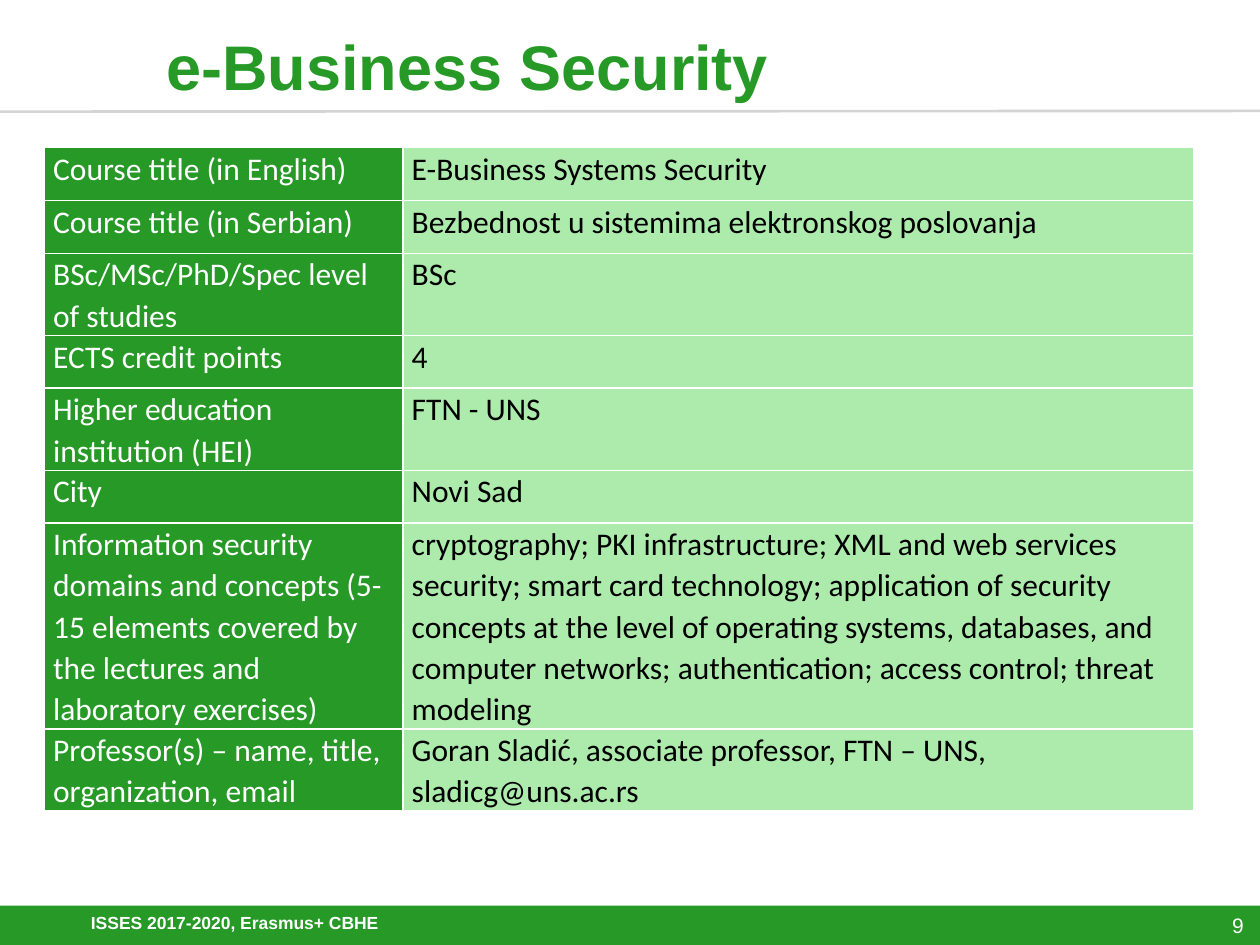
from lxml.etree import SubElement
from pptx import Presentation
from pptx.dml.color import RGBColor
from pptx.enum.shapes import MSO_CONNECTOR, MSO_SHAPE
from pptx.enum.text import MSO_ANCHOR, MSO_AUTO_SIZE, PP_ALIGN
from pptx.oxml.ns import qn
from pptx.util import Pt

GREEN = RGBColor(0x26, 0x99, 0x26)
LIGHT_GREEN = RGBColor(0xAD, 0xEB, 0xAD)
GRAY = RGBColor(0xD4, 0xD4, 0xD4)
WHITE = RGBColor(0xFF, 0xFF, 0xFF)
BLACK = RGBColor(0, 0, 0)

TITLE = "e-Business Security"
FOOTER = "ISSES 2017-2020, Erasmus+ CBHE"
PAGE = "9"
ONE_LINE, TWO_LINES, FIVE_LINES = 30.24, 46.9, 117.5
COLUMNS = [204.9, 452]
COURSE = [
    ("Course title (in English)", "E-Business Systems Security", ONE_LINE),
    ("Course title (in Serbian)", "Bezbednost u sistemima elektronskog poslovanja", ONE_LINE),
    ("BSc/MSc/PhD/Spec level of studies", "BSc", TWO_LINES),
    ("ECTS credit points", "4", ONE_LINE),
    ("Higher education institution (HEI)", "FTN - UNS", TWO_LINES),
    ("City", "Novi Sad", ONE_LINE),
    ("Information security domains and concepts (5-15 elements covered by "
     "the lectures and laboratory exercises)",
     "cryptography; PKI infrastructure; XML and web services security; smart card "
     "technology; application of security concepts at the level of operating systems, "
     "databases, and computer networks; authentication; access control; threat modeling",
     FIVE_LINES),
    ("Professor(s) – name, title, organization, email",
     "Goran Sladić, associate professor, FTN – UNS, sladicg@uns.ac.rs", TWO_LINES),
]


def write(tf, text, size, color, font="Arial", bold=False, align=PP_ALIGN.LEFT, spacing=1.0):
    tf.word_wrap = True
    p = tf.paragraphs[0]
    p.text = text
    p.alignment = align
    p.line_spacing = spacing
    p.font.name, p.font.size, p.font.bold = font, Pt(size), bold
    p.font.color.rgb = color


def add_footer_text(s, left, width, text, size, **style):
    tf = s.shapes.add_textbox(Pt(left), Pt(517), Pt(width), Pt(23)).text_frame
    tf.vertical_anchor = MSO_ANCHOR.MIDDLE
    write(tf, text, size, WHITE, align=PP_ALIGN.RIGHT, **style)


def format_cell(cell, text, color, fill):
    cell.margin_left = cell.margin_right = Pt(5)
    cell.margin_top = cell.margin_bottom = 0
    write(cell.text_frame, text, 18, color, font="Calibri", spacing=1.07)
    tcPr = cell._tc.get_or_add_tcPr()
    for side in ("a:lnL", "a:lnR", "a:lnT", "a:lnB"):
        ln = SubElement(tcPr, qn(side), w=str(Pt(1)))
        SubElement(SubElement(ln, qn("a:solidFill")), qn("a:srgbClr"), val=str(WHITE))
    cell.fill.solid()
    cell.fill.fore_color.rgb = fill


prs = Presentation()
prs.slide_width, prs.slide_height = Pt(720), Pt(540)
s = prs.slides.add_slide(prs.slide_layouts[5])

bar = s.shapes.add_shape(MSO_SHAPE.RECTANGLE, 0, Pt(517.5), Pt(720), Pt(22.5))
bar.shadow.inherit = False
bar.fill.solid()
bar.fill.fore_color.rgb = GREEN
bar.line.fill.background()

rule = s.shapes.add_connector(MSO_CONNECTOR.STRAIGHT, 0, Pt(63.8), Pt(720), Pt(63.4))
rule.line.color.rgb = GRAY
rule.line.width = Pt(1.5)
SubElement(rule._element.spPr, qn("a:effectLst"))

title = s.shapes.title
title.left, title.top, title.width, title.height = Pt(87.8), Pt(5.8), Pt(546.5), Pt(62.6)
title.text_frame.auto_size = MSO_AUTO_SIZE.NONE
title.text_frame.vertical_anchor = MSO_ANCHOR.MIDDLE
write(title.text_frame, TITLE, 36, GREEN, bold=True)

add_footer_text(s, 666, 51.8, PAGE, 12)
add_footer_text(s, 11.5, 211.7, FOOTER, 10, bold=True, spacing=0.8)

heights = [height for _, _, height in COURSE]
table = s.shapes.add_table(len(COURSE), len(COLUMNS), Pt(25.4), Pt(84.3),
                           Pt(sum(COLUMNS)), Pt(sum(heights))).table
for column, width in zip(table.columns, COLUMNS):
    column.width = Pt(width)
for i, (label, value, height) in enumerate(COURSE):
    table.rows[i].height = Pt(height)
    format_cell(table.cell(i, 0), label, WHITE, GREEN)
    format_cell(table.cell(i, 1), value, BLACK, LIGHT_GREEN)

prs.save("out.pptx")
